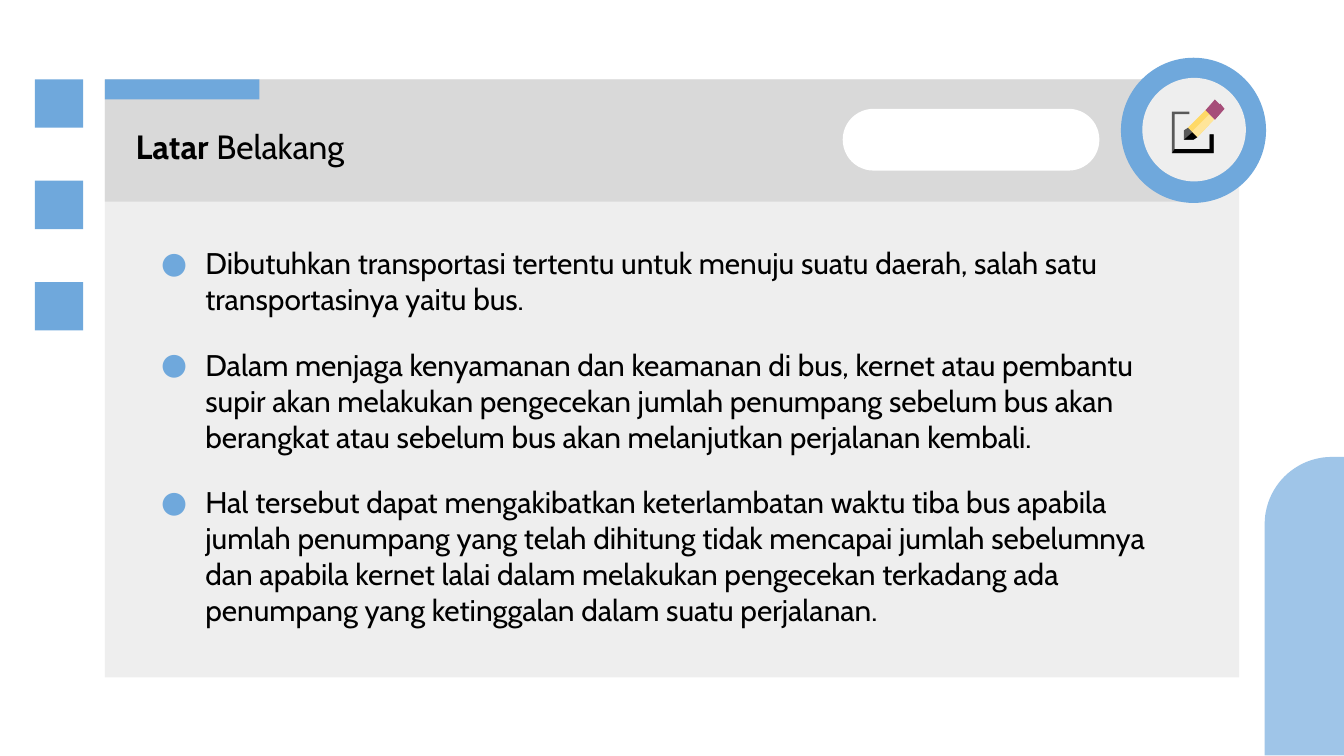
from math import cos, pi, sin

from lxml.etree import SubElement
from pptx import Presentation
from pptx.dml.color import RGBColor
from pptx.enum.shapes import MSO_SHAPE as Shape
from pptx.enum.text import MSO_ANCHOR as Anchor, MSO_AUTO_SIZE as AutoSize, PP_ALIGN as Align
from pptx.oxml.ns import qn
from pptx.util import Inches, Pt

FONT = "Cabin"
COLORS = {
    "black": "000000",
    "white": "FFFFFF",
    "panel": "EEEEEE",
    "header": "D9D9D9",
    "blue": "6FA8DC",
    "light_blue": "9FC5E8",
    "graphite": "595959",
    "yellow": "FFD966",
    "light_yellow": "FFE599",
    "eraser": "A64D79",
}
BULLETS = [
    "Dibutuhkan transportasi tertentu untuk menuju suatu daerah, salah satu transportasinya yaitu bus.",
    "Dalam menjaga kenyamanan dan keamanan di bus, kernet atau pembantu supir akan melakukan "
    "pengecekan jumlah penumpang sebelum bus akan berangkat atau sebelum bus akan melanjutkan "
    "perjalanan kembali.",
    "Hal tersebut dapat mengakibatkan keterlambatan waktu tiba bus apabila jumlah penumpang yang "
    "telah dihitung tidak mencapai jumlah sebelumnya dan apabila kernet lalai dalam melakukan "
    "pengecekan terkadang ada penumpang yang ketinggalan dalam suatu perjalanan.",
]
PENCIL_ICON = [
    ("graphite", [(8.84, 0.95), (8.81, 0.97), (8.81, 1.04), (8.88, 1.04), (8.91, 1.02), (8.9, 0.96)]),
    ("black", [(8.9, 0.96), (8.81, 1.04), (8.88, 1.04), (8.91, 1.02)]),
    ("yellow", [(9, 0.79), (8.84, 0.95), (8.91, 1.02), (9.07, 0.85)]),
    ("light_yellow", [(9.03, 0.82), (8.87, 0.98), (8.91, 1.02), (9.07, 0.85)]),
    ("eraser", [(9.04, 0.74), (8.97, 0.82), (9.04, 0.89), (9.11, 0.81)]),
    ("graphite", [(8.72, 0.83), (8.72, 1.14), (9.03, 1.14), (9.03, 1), (9, 1), (9, 1.11),
                  (8.74, 1.11), (8.74, 0.85), (8.85, 0.85), (8.85, 0.83)]),
    ("eraser", [(9.08, 0.77), (9, 0.85), (9.04, 0.89), (9.11, 0.81)]),
    ("black", [(9, 1), (9, 1.11), (8.74, 1.11), (8.72, 1.14), (9.03, 1.14), (9.03, 1)]),
]


def rgb(name):
    """Return the named palette colour."""
    return RGBColor.from_string(COLORS[name])


def paint(shape, color):
    """Give a shape a flat fill without line or shadow."""
    shape.shadow.inherit = False
    shape.fill.solid()
    shape.fill.fore_color.rgb = rgb(color)
    shape.line.fill.background()


def add_block(shapes, kind, color, left, top, width, height):
    """Add a flat preset shape."""
    shape = shapes.add_shape(kind, Inches(left), Inches(top), Inches(width), Inches(height))
    paint(shape, color)
    return shape


def add_polygon(shapes, color, points):
    """Add a flat closed outline through points given in inches."""
    corners = [(Inches(x), Inches(y)) for x, y in points]
    builder = shapes.build_freeform(*corners[0], scale=1.0)
    builder.add_line_segments(corners[1:], close=True)
    paint(builder.convert_to_shape(), color)


def add_text(paragraph, text, size=16, bold=False, color="black"):
    """Append a formatted run to a paragraph."""
    run = paragraph.add_run()
    run.text = text
    run.font.name = FONT
    run.font.size = Pt(size)
    run.font.bold = bold
    run.font.color.rgb = rgb(color)


def set_frame(frame):
    """Set wrapping, middle anchoring and equal insets."""
    frame.word_wrap = True
    frame.auto_size = AutoSize.NONE
    frame.vertical_anchor = Anchor.MIDDLE
    frame.margin_left = frame.margin_right = Inches(0.1)
    frame.margin_top = frame.margin_bottom = Inches(0.1)


def set_bullet(paragraph):
    """Give a paragraph a hanging blue bullet."""
    properties = paragraph._p.get_or_add_pPr()
    properties.set("marL", str(Inches(0.5)))
    properties.set("indent", str(Inches(-0.33)))
    color = SubElement(properties, qn("a:buClr"))
    SubElement(color, qn("a:srgbClr"), val=COLORS["blue"])
    SubElement(properties, qn("a:buFont"), typeface=FONT)
    SubElement(properties, qn("a:buChar"), char="●")


def add_title(slide):
    """Place the title in front of the header band."""
    title = slide.shapes.title
    title.left, title.top, title.width, title.height = map(Inches, (0.91, 0.92, 2.94, 0.34))
    title.element.getparent().append(title.element)
    set_frame(title.text_frame)
    paragraph = title.text_frame.paragraphs[0]
    paragraph.alignment = Align.LEFT
    add_text(paragraph, "Latar ", size=18, bold=True)
    add_text(paragraph, "Belakang", size=18)


def add_bullets(slide):
    """Add the bulleted background text."""
    box = slide.shapes.add_textbox(*map(Inches, (0.93, 1.6, 7.76, 3.29)))
    frame = box.text_frame
    set_frame(frame)
    for index, text in enumerate(BULLETS):
        paragraph = frame.add_paragraph() if index else frame.paragraphs[0]
        paragraph.space_before = Pt(16 if index else 0)
        set_bullet(paragraph)
        add_text(paragraph, text)


def add_corner(shapes):
    """Add the light tab with a rounded top left corner at the slide's edge."""
    left, top, right, bottom, radius, steps = 9.41, 3.4, 10, 5.62, 0.5, 24
    angles = [pi / 2 * step / steps for step in range(steps + 1)]
    arc = [(left + radius * (1 - cos(a)), top + radius * (1 - sin(a))) for a in angles]
    add_polygon(shapes, "light_blue", arc + [(right, top), (right, bottom), (left, bottom)])


def add_decoration(shapes):
    """Add the panel, header, side squares and corner tab."""
    add_block(shapes, Shape.RECTANGLE, "panel", 0.78, 0.59, 8.44, 4.45)
    add_block(shapes, Shape.RECTANGLE, "header", 0.78, 0.59, 8.12, 0.91)
    add_block(shapes, Shape.RECTANGLE, "blue", 0.78, 0.59, 1.15, 0.15)
    add_block(shapes, Shape.OVAL, "blue", 8.34, 0.43, 1.08, 1.08)
    pill = add_block(shapes, Shape.ROUNDED_RECTANGLE, "white", 6.27, 0.81, 1.91, 0.46)
    pill.adjustments[0] = 0.5
    squares = shapes.add_group_shape().shapes
    for row in range(3):
        add_block(squares, Shape.RECTANGLE, "blue", 0.26, 0.59 + 0.755 * row, 0.36, 0.36)
    add_corner(shapes)


def add_icon(shapes):
    """Add the pencil icon on its disc."""
    add_block(shapes, Shape.OVAL, "panel", 8.5, 0.58, 0.77, 0.77)
    icon = shapes.add_group_shape().shapes
    for color, points in PENCIL_ICON:
        add_polygon(icon, color, points)


def main():
    """Build and save the slide."""
    presentation = Presentation()
    presentation.slide_width = Inches(10)
    presentation.slide_height = Inches(10) * 9 // 16
    slide = presentation.slides.add_slide(presentation.slide_layouts[5])
    add_decoration(slide.shapes)
    add_bullets(slide)
    add_title(slide)
    add_icon(slide.shapes)
    presentation.save("out.pptx")


if __name__ == "__main__":
    main()
